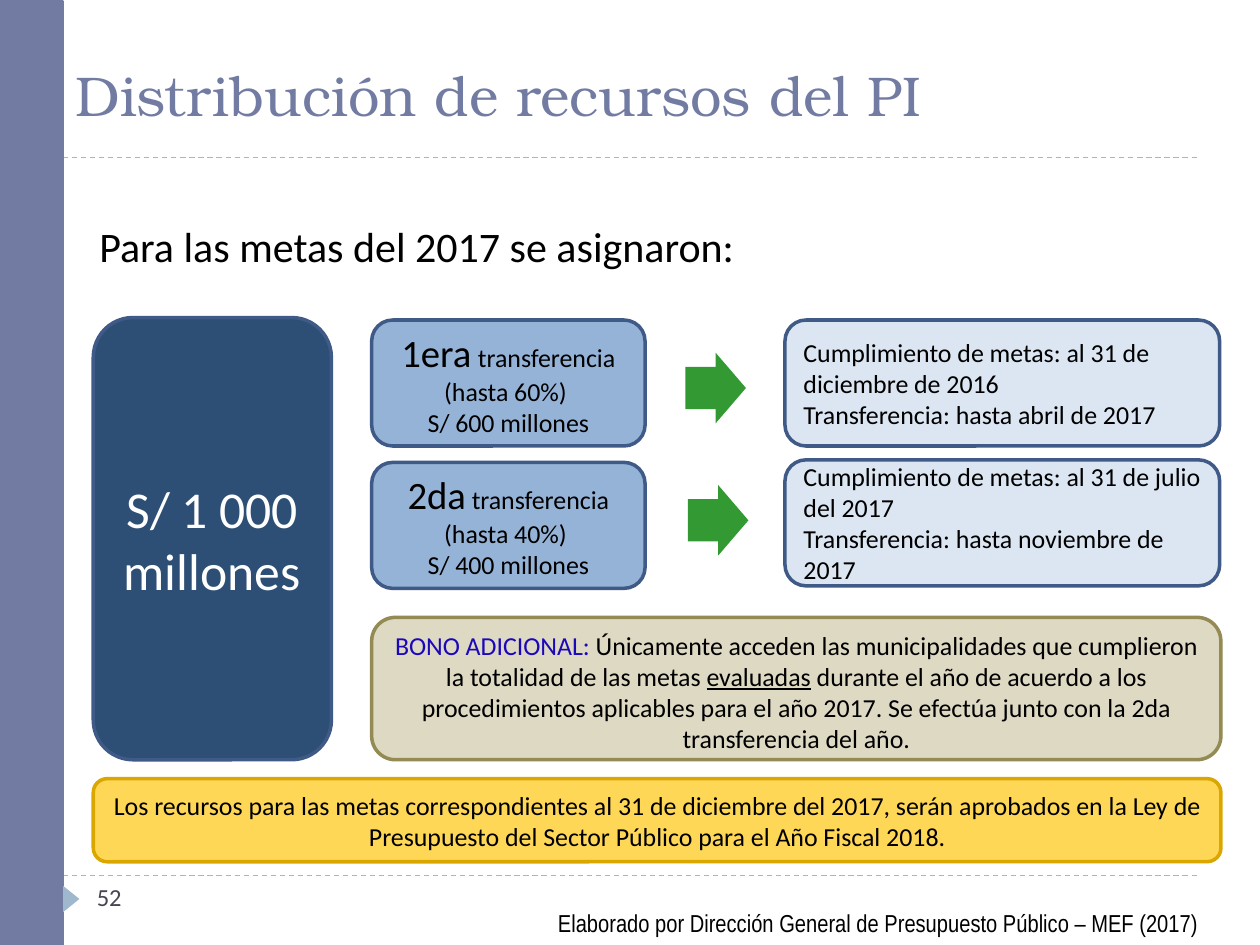
"""Build the slide on how the incentive programme's resources are distributed."""
from lxml import etree
from pptx import Presentation
from pptx import util as u
from pptx.dml.color import RGBColor
from pptx.enum import dml, shapes, text
from pptx.oxml import ns

deck = Presentation()
deck.slide_width, deck.slide_height = u.Inches(10), u.Inches(7.5)
page = deck.slides.add_slide(deck.slide_layouts[6])
COLUMN, ROW = deck.slide_width / 100, deck.slide_height / 75
KIND = shapes.MSO_SHAPE
LEFT, CENTER = text.PP_ALIGN.LEFT, text.PP_ALIGN.CENTER
TOP, MIDDLE = text.MSO_ANCHOR.TOP, text.MSO_ANCHOR.MIDDLE
BLACK, WHITE, SLATE, MIST, NAVY = "000000", "FFFFFF", "727CA3", "9FB8CD", "3F5A87"
BODY = 14.8


def add_box(kind, column, row, columns, rows, fill, line=None, weight=2):
    box = page.shapes.add_shape(kind, int(column * COLUMN), int(row * ROW),
                                int(columns * COLUMN), int(rows * ROW))
    box.shadow.inherit = False
    box.fill.solid()
    box.fill.fore_color.rgb = RGBColor.from_string(fill)
    if line:
        box.line.color.rgb = RGBColor.from_string(line)
        box.line.width = u.Pt(weight)
    else:
        box.line.fill.background()
    return box


def write(box, paragraphs, align=LEFT, anchor=MIDDLE, font="Calibri"):
    frame = box.text_frame
    frame.word_wrap = True
    frame.vertical_anchor = anchor
    for number, spans in enumerate(paragraphs):
        para = frame.add_paragraph() if number else frame.paragraphs[0]
        para.alignment = align
        for words, size, color in spans:
            span = para.add_run()
            span.text = words
            span.font.name = font
            span.font.size = u.Pt(size)
            span.font.color.rgb = RGBColor.from_string(color)
            span.font.underline = words == "evaluadas"


for row in (69.5, 12.5):
    rule = page.shapes.add_connector(shapes.MSO_CONNECTOR.STRAIGHT, int(5 * COLUMN),
                                     int(row * ROW), int(95 * COLUMN), int(row * ROW))
    rule.line.color.rgb = RGBColor.from_string(MIST)
    rule.line.width = u.Pt(0.75)
    rule.line.dash_style = dml.MSO_LINE.DASH
    etree.SubElement(rule._element.spPr, ns.qn("a:effectLst"))

add_box(KIND.RECTANGLE, 0, 0.1, 5, 74.9, SLATE, SLATE, 1.5)
marker = add_box(KIND.ISOSCELES_TRIANGLE, 4.6, 70.7, 2.1, 1.3, MIST)
marker.rotation = 90

labels = [
    (5, 2.5, 90, 10, "Distribución de recursos del PI", 32, SLATE, "TeX Gyre Bonum", MIDDLE),
    (6.9, 17, 88.7, 5, "Para las metas del 2017 se asignaron:", 24, BLACK, "Calibri", TOP),
    (43.3, 71.6, 56.7, 3.4,
     "Elaborado por Dirección General de Presupuesto Público – MEF (2017)",
     14, BLACK, "Arial Narrow", TOP),
    (6.7, 69.5, 21.7, 4, "52", 14, "464653", "Calibri", TOP),
]
for column, row, columns, rows, words, size, color, font, anchor in labels:
    label = page.shapes.add_textbox(int(column * COLUMN), int(row * ROW),
                                    int(columns * COLUMN), int(rows * ROW))
    write(label, [[(words, size, color)]], LEFT, anchor, font)

total = add_box(KIND.ROUNDED_RECTANGLE, 7.4, 25.2, 18.9, 35.1, "2D4E75", NAVY)
write(total, [[("S/ 1 000 millones", 29.5, WHITE)]], CENTER)

transfers = [
    (25.4, 25.4, 54.4, 28, "1era", 16.6, "60", "600",
     "31 de diciembre de 2016", "abril de 2017"),
    (36.7, 36.5, 54.6, 38.5, "2da", BODY, "40", "400",
     "31 de julio del 2017", "noviembre de 2017"),
]
for (row, goal_row, arrow_column, arrow_row, order, gap, share, amount,
     deadline, payment) in transfers:
    transfer = add_box(KIND.ROUNDED_RECTANGLE, 29.5, row, 21.7, 10, "95B3D7", NAVY)
    write(transfer, [[(order, 22.1, BLACK), (" ", gap, BLACK),
                      (f"transferencia (hasta {share}%) ", BODY, BLACK)],
                     [(f"S/ {amount} millones", BODY, BLACK)]], CENTER)
    arrow = add_box(KIND.RIGHT_ARROW, arrow_column, arrow_row, 4.8, 5.6, "339933")
    arrow.adjustments[0] = 0.6
    goal = add_box(KIND.ROUNDED_RECTANGLE, 62.3, goal_row, 34.5, 10, "DCE6F2", NAVY)
    write(goal, [[(f"Cumplimiento de metas: al {deadline}", BODY, BLACK)],
                 [(f"Transferencia: hasta {payment}", BODY, BLACK)]])

bonus = add_box(KIND.ROUNDED_RECTANGLE, 29.5, 49, 67.4, 11.3, "DDD9C3", "948A54")
bonus.text_frame.margin_top = u.Inches(0.1)
write(bonus, [[
    ("BONO ADICIONAL: ", BODY, "1C07B9"),
    ("Únicamente acceden las municipalidades que cumplieron la totalidad de las metas ",
     BODY, BLACK),
    ("evaluadas", BODY, BLACK),
    (" durante el año de acuerdo a los procedimientos aplicables para el año 2017. "
     "Se efectúa junto con la 2da transferencia del año.", BODY, BLACK),
]], CENTER)

outlook = add_box(KIND.ROUNDED_RECTANGLE, 7.4, 61.8, 89.5, 6.6, "FFD757", "DAA600")
write(outlook, [[
    ("Los recursos para las metas correspondientes al 31 de diciembre del 2017, serán "
     "aprobados en la Ley de Presupuesto del Sector Público para el Año Fiscal 2018.",
     BODY, BLACK),
]], CENTER)

deck.save("out.pptx")
